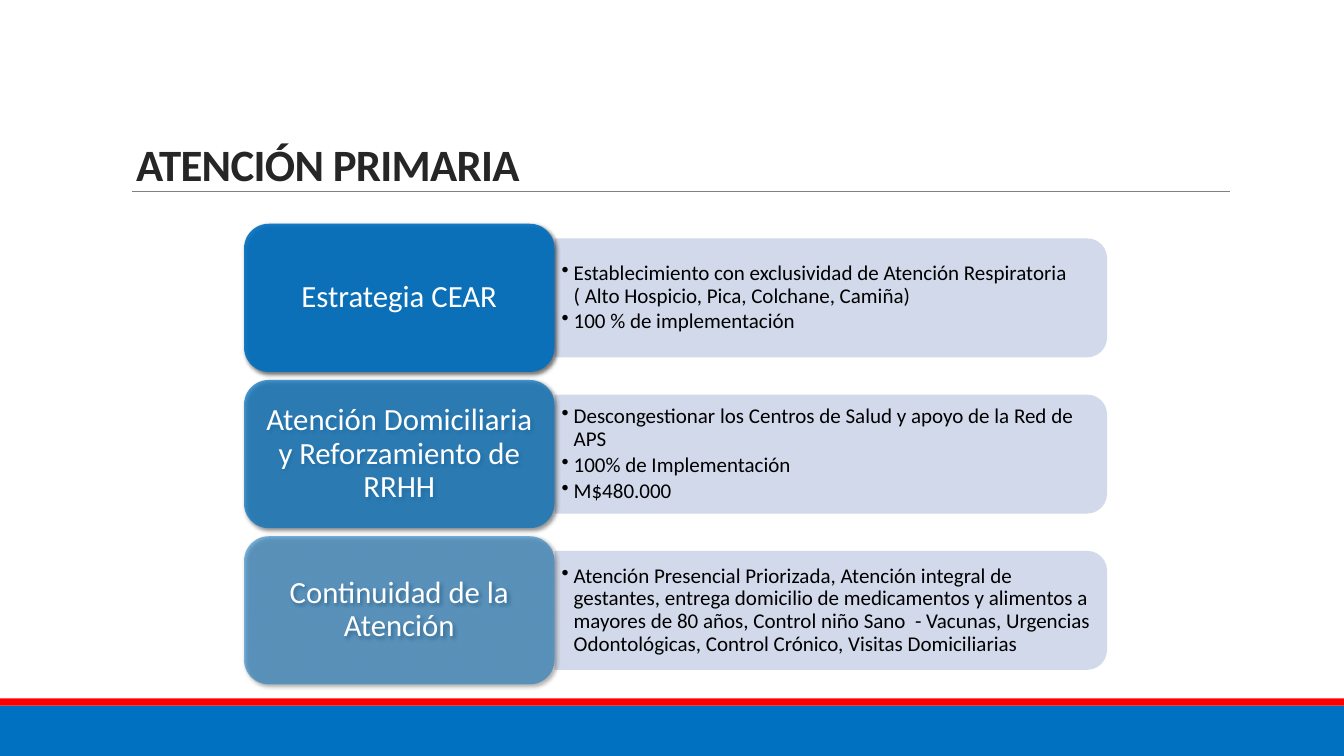
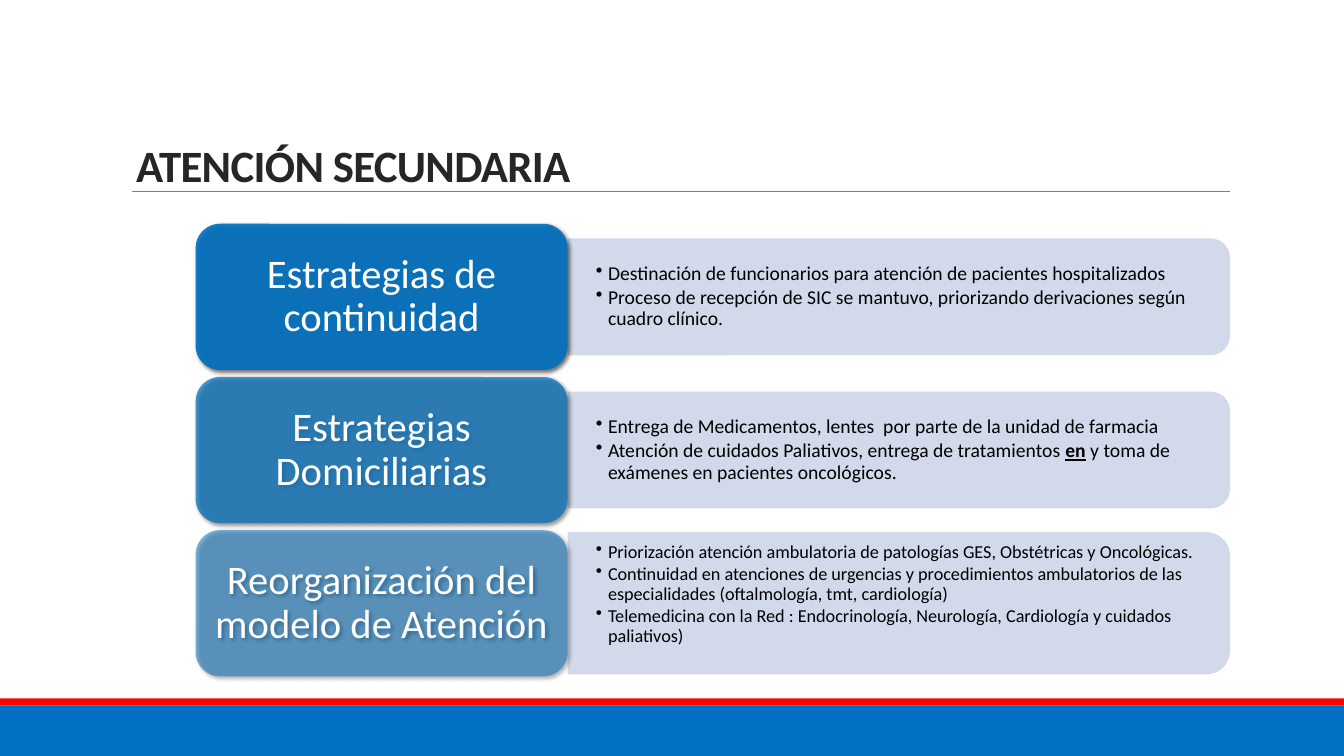
import pptx
import pptx.util
import pptx.dml.color
import pptx.enum.shapes
import pptx.enum.text
import pptx.oxml
import pptx.oxml.ns

Inches, Pt = pptx.util.Inches, pptx.util.Pt
SHAPE = pptx.enum.shapes.MSO_SHAPE
ANCHOR = pptx.enum.text.MSO_ANCHOR
ALIGN = pptx.enum.text.PP_ALIGN
qn = pptx.oxml.ns.qn

FONT = "Calibri"
COLORS = {"blue": "0070C0", "red": "FF0000", "rule": "808080", "title": "262626",
          "panel": "CCD5E8", "text": "000000", "white": "FFFFFF"}
WIDTH, HEIGHT = 13.33, 7.5
BANDS = [("blue", 7, 0.5), ("red", 6.93, 0.07)]  # colour, top, height
LABEL_ALPHAS = [90, 70, 50]
PANEL_ALPHA = 90
ROWS_TOP = 2.22
TEXT_TRIM = 0.06  # text area is narrower than its panel by this much

# Within a bullet given as a tuple, every second part is emphasised.
SLIDES = [
    {
        "title": "ATENCIÓN PRIMARIA", "title_top": 0.68,
        "left": 2.42, "label_size": (3.08, 1.47), "label_pt": 22, "label_inset": 0.09,
        "pitch": 1.55, "panel_width": 5.48, "text_inset": 0.06,
        "rows": [
            {"label": "Estrategia CEAR", "pt": 15, "panel_height": 1.18, "bullets": [
                "Establecimiento con exclusividad de Atención Respiratoria "
                "( Alto Hospicio, Pica, Colchane, Camiña)",
                "100 % de implementación"]},
            {"label": "Atención Domiciliaria y Reforzamiento de RRHH", "pt": 15,
             "panel_height": 1.18, "bullets": [
                 "Descongestionar los Centros de Salud y apoyo de la Red de APS",
                 "100% de Implementación",
                 "M$480.000"]},
            {"label": "Continuidad de la Atención", "pt": 15, "panel_height": 1.18, "bullets": [
                "Atención Presencial Priorizada, Atención integral de gestantes, entrega "
                "domicilio de medicamentos y alimentos a mayores de 80 años, Control niño "
                "Sano  - Vacunas, Urgencias Odontológicas, Control Crónico, Visitas "
                "Domiciliarias"]},
        ],
    },
    {
        "title": "ATENCIÓN SECUNDARIA", "title_top": 0.69,
        "left": 1.94, "label_size": (3.69, 1.45), "label_pt": 29, "label_inset": 0.12,
        "pitch": 1.52, "panel_width": 6.57, "text_inset": 0.27,
        "rows": [
            {"label": "Estrategias de continuidad", "pt": 14, "panel_height": 1.16, "bullets": [
                "Destinación de funcionarios para atención de pacientes hospitalizados",
                "Proceso de recepción de SIC se mantuvo, priorizando derivaciones según "
                "cuadro clínico."]},
            {"label": "Estrategias Domiciliarias", "pt": 14, "panel_height": 1.16, "bullets": [
                "Entrega de Medicamentos, lentes  por parte de la unidad de farmacia",
                ("Atención de cuidados Paliativos, entrega de tratamientos ", "en",
                 " y toma de exámenes en pacientes oncológicos.")]},
            {"label": "Reorganización del modelo de Atención", "pt": 13,
             "panel_height": 1.41, "bottom_inset": 0.18, "bullets": [
                 "Priorización atención ambulatoria de patologías GES, Obstétricas y "
                 "Oncológicas.",
                 "Continuidad en atenciones de urgencias y procedimientos ambulatorios de "
                 "las especialidades (oftalmología, tmt, cardiología)",
                 "Telemedicina con la Red : Endocrinología, Neurología, Cardiología y "
                 "cuidados paliativos)"]},
        ],
    },
]


def rgb(name):
    return pptx.dml.color.RGBColor.from_string(COLORS[name])


def add_xml(parent, tag, **attributes):
    child = pptx.oxml.parse_xml(f"<a:{tag} {pptx.oxml.ns.nsdecls('a')}/>")
    for name, value in attributes.items():
        child.set(name, str(value))
    parent.append(child)
    return child


def add_filled(slide, preset, left, top, width, height, color, alpha=100):
    shape = slide.shapes.add_shape(preset, Inches(left), Inches(top),
                                   Inches(width), Inches(height))
    shape.shadow.inherit = False
    shape.line.fill.background()
    shape.fill.solid()
    shape.fill.fore_color.rgb = rgb(color)
    if alpha < 100:
        fill_color = shape.element.spPr.find(qn("a:solidFill")).find(qn("a:srgbClr"))
        add_xml(fill_color, "alpha", val=alpha * 1000)
    return shape


def add_drop_shadow(shape):
    effects = shape.element.spPr.find(qn("a:effectLst"))
    shadow = add_xml(effects, "outerShdw", blurRad=Pt(3), dist=Pt(2),
                     dir=45 * 60000, algn="ctr", rotWithShape=0)
    add_xml(add_xml(shadow, "srgbClr", val="000000"), "alpha", val=60000)


def set_frame(frame, horizontal, top, bottom, anchor):
    frame.word_wrap = True
    frame.auto_size = pptx.enum.text.MSO_AUTO_SIZE.NONE
    frame.margin_left = frame.margin_right = Inches(horizontal)
    frame.margin_top, frame.margin_bottom = Inches(top), Inches(bottom)
    frame.vertical_anchor = anchor


def style(paragraph, size, color, spacing=0.9, align=ALIGN.LEFT):
    paragraph.font.name = FONT
    paragraph.font.size = Pt(size)
    paragraph.font.color.rgb = rgb(color)
    paragraph.line_spacing = spacing
    paragraph.alignment = align


def add_shared_parts(layout, slide):
    """Draw the bands and title rule, then hand them over to the layout."""
    parts = [add_filled(slide, SHAPE.RECTANGLE, 0, top, WIDTH, height, color)
             for color, top, height in BANDS]
    rule = slide.shapes.add_connector(pptx.enum.shapes.MSO_CONNECTOR.STRAIGHT,
                                      Inches(1.31), Inches(1.9), Inches(12.2), Inches(1.9))
    rule.line.color.rgb = rgb("rule")
    rule.line.width = Pt(0.5)
    add_xml(rule.element.spPr, "effectLst")
    for part in parts + [rule]:
        layout.shapes.element.append(part.element)


def set_title(slide, text, top):
    title = slide.shapes.title
    title.left, title.top = Inches(1.25), Inches(top)
    title.width, title.height = Inches(8.12), Inches(1.26)
    set_frame(title.text_frame, 0.1, 0.05, 0.05, ANCHOR.BOTTOM)
    title.text_frame.text = text
    paragraph = title.text_frame.paragraphs[0]
    style(paragraph, 32, "title", spacing=0.85)
    paragraph.font.bold = True
    paragraph.runs[0].font.language_id = pptx.enum.lang.MSO_LANGUAGE_ID.SPANISH
    paragraph.runs[0].font._element.set("spc", "-50")


def add_bullets(frame, bullets, size):
    for index, bullet in enumerate(bullets):
        paragraph = frame.paragraphs[0] if index == 0 else frame.add_paragraph()
        parts = (bullet,) if isinstance(bullet, str) else bullet
        for position, part in enumerate(parts):
            run = paragraph.add_run()
            run.text = part
            if position % 2:
                run.font.bold = run.font.underline = True
        style(paragraph, size, "text")
        paragraph.space_after = Pt(round(size * 0.15, 2))
        properties = paragraph._p.get_or_add_pPr()
        properties.set("marL", str(Inches(0.12)))
        properties.set("indent", str(-Inches(0.12)))
        bullet_mark = add_xml(properties, "buChar", char="•")
        properties.find(qn("a:defRPr")).addprevious(bullet_mark)


def add_row(slide, content, row, top, alpha):
    label_width, label_height = content["label_size"]
    panel_width, panel_height = content["panel_width"], row["panel_height"]
    panel_left = content["left"] + label_width
    middle = top + label_height / 2

    # The panel is drawn upright and turned so its round corners face right.
    panel = add_filled(slide, SHAPE.ROUND_2_SAME_RECTANGLE,
                       panel_left + (panel_width - panel_height) / 2,
                       middle - panel_width / 2,
                       panel_height, panel_width, "panel", PANEL_ALPHA)
    panel.rotation = 90

    details = slide.shapes.add_textbox(
        Inches(panel_left + 0.01), Inches(middle - panel_height / 2 + TEXT_TRIM),
        Inches(panel_width - TEXT_TRIM), Inches(panel_height - 2 * TEXT_TRIM))
    set_frame(details.text_frame, content["text_inset"], 0, row.get("bottom_inset", 0),
              ANCHOR.MIDDLE)
    add_bullets(details.text_frame, row["bullets"], row["pt"])

    label = add_filled(slide, SHAPE.ROUNDED_RECTANGLE, content["left"], top,
                       label_width, label_height, "blue", alpha)
    add_drop_shadow(label)
    set_frame(label.text_frame, content["label_inset"], 0.05, 0.05, ANCHOR.MIDDLE)
    label.text_frame.text = row["label"]
    style(label.text_frame.paragraphs[0], content["label_pt"], "white", align=ALIGN.CENTER)


def main():
    deck = pptx.Presentation()
    deck.slide_width, deck.slide_height = Inches(WIDTH), Inches(HEIGHT)
    layout = deck.slide_layouts.get_by_name("Title Only")
    for number, content in enumerate(SLIDES):
        slide = deck.slides.add_slide(layout)
        if number == 0:
            add_shared_parts(layout, slide)
        set_title(slide, content["title"], content["title_top"])
        for index, (row, alpha) in enumerate(zip(content["rows"], LABEL_ALPHAS)):
            add_row(slide, content, row, ROWS_TOP + index * content["pitch"], alpha)
    deck.save("out.pptx")


if __name__ == "__main__":
    main()
